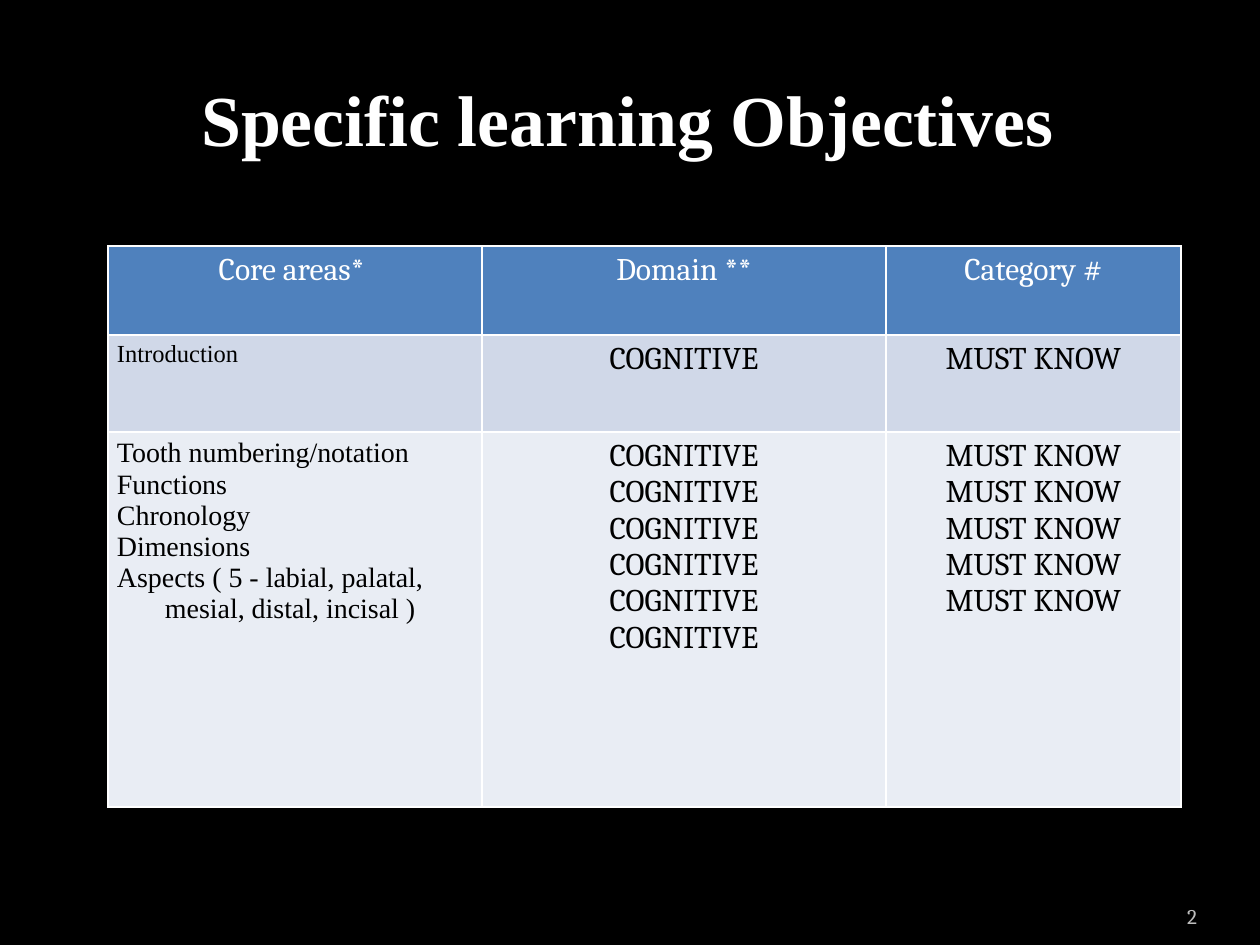
from lxml import etree
from pptx import Presentation
from pptx import util as u
from pptx.dml.color import RGBColor
from pptx.enum import text
from pptx.oxml.ns import qn

# Content
TITLE = "Specific learning Objectives "
PAGE_NUMBER = "2"
SERIF, BODY = "Times New Roman", "Cambria"
HEADINGS = ["Core areas* ", "Domain **", "Category #"]
TOPICS = [
    "Tooth numbering/notation",
    "Functions",
    "Chronology",
    "Dimensions",
    "Aspects ( 5 - labial, palatal, mesial, distal, incisal )",
]
MUST = "MUST KNOW"
ROWS = [  # height, fill, text colour, size of first column, cells as lists of lines
    (89, "4F81BD", "FFFFFF", 18, [[heading] for heading in HEADINGS]),
    (97, "D0D8E8", "000000", 14, [["Introduction"], ["COGNITIVE"], [MUST]]),
    (375, "E9EDF4", "000000", 16,
     [TOPICS, ["COGNITIVE"] * 6, [MUST] * 3 + [" MUST KNOW ", MUST]]),
]
COLUMN_WIDTHS = [374, 404, 295]
HANGING = 48


def px(value):
    return u.Emu(round(value * 914400 / 126))


def colour(value):
    return RGBColor.from_string(value)


def style(para, font, size, fill, align, bold=False):
    para.alignment = align
    for span in para.runs:
        span.font.name = font
        span.font.size = u.Pt(size)
        span.font.bold = bold
        span.font.color.rgb = colour(fill)


def add_borders(cell, fill):
    props = cell._tc.get_or_add_tcPr()
    for index, side in enumerate(("lnL", "lnR", "lnT", "lnB")):
        line = etree.Element(qn("a:" + side), w=str(u.Pt(1)))
        solid = etree.SubElement(line, qn("a:solidFill"))
        etree.SubElement(solid, qn("a:srgbClr"), val=fill)
        props.insert(index, line)


deck = Presentation()
deck.slide_width, deck.slide_height = px(1260), px(945)
page = deck.slides.add_slide(deck.slide_layouts[5])
page.background.fill.solid()
page.background.fill.fore_color.rgb = colour("000000")

# Title
title = page.shapes.title
title.left, title.top, title.width, title.height = map(px, (158, 42, 958, 152))
title.text_frame.text = TITLE
title.text_frame.vertical_anchor = text.MSO_ANCHOR.MIDDLE
style(title.text_frame.paragraphs[0], SERIF, 41, "FFFFFF", text.PP_ALIGN.CENTER, True)

# Table
table = page.shapes.add_table(
    len(ROWS), len(COLUMN_WIDTHS), px(108), px(246),
    px(sum(COLUMN_WIDTHS)), px(sum(row[0] for row in ROWS))).table
for column, width in zip(table.columns, COLUMN_WIDTHS):
    column.width = px(width)
for r, (height, fill, ink, first_size, cells) in enumerate(ROWS):
    table.rows[r].height = px(height)
    for c, lines in enumerate(cells):
        cell = table.cell(r, c)
        cell.margin_left = cell.margin_right = px(9)
        cell.margin_top = cell.margin_bottom = px(6)
        cell.fill.solid()
        cell.fill.fore_color.rgb = colour(fill)
        add_borders(cell, "FFFFFF")
        cell.text_frame.text = "\n".join(lines)
        is_topic = r > 0 and c == 0
        for para in cell.text_frame.paragraphs:
            if is_topic:
                style(para, SERIF, first_size, ink, text.PP_ALIGN.LEFT)
                indent = para._p.get_or_add_pPr()
                indent.set("marL", str(px(HANGING)))
                indent.set("indent", str(-px(HANGING)))
            else:
                style(para, BODY, 18, ink, text.PP_ALIGN.CENTER)

# Page number
box = page.shapes.add_textbox(px(1092), px(885), px(105), px(50))
frame = box.text_frame
frame.word_wrap = True
frame.margin_left = frame.margin_right = 0
frame.vertical_anchor = text.MSO_ANCHOR.BOTTOM
frame.text = PAGE_NUMBER
style(frame.paragraphs[0], BODY, 12, "BDBDBD", text.PP_ALIGN.RIGHT)

deck.save("out.pptx")
